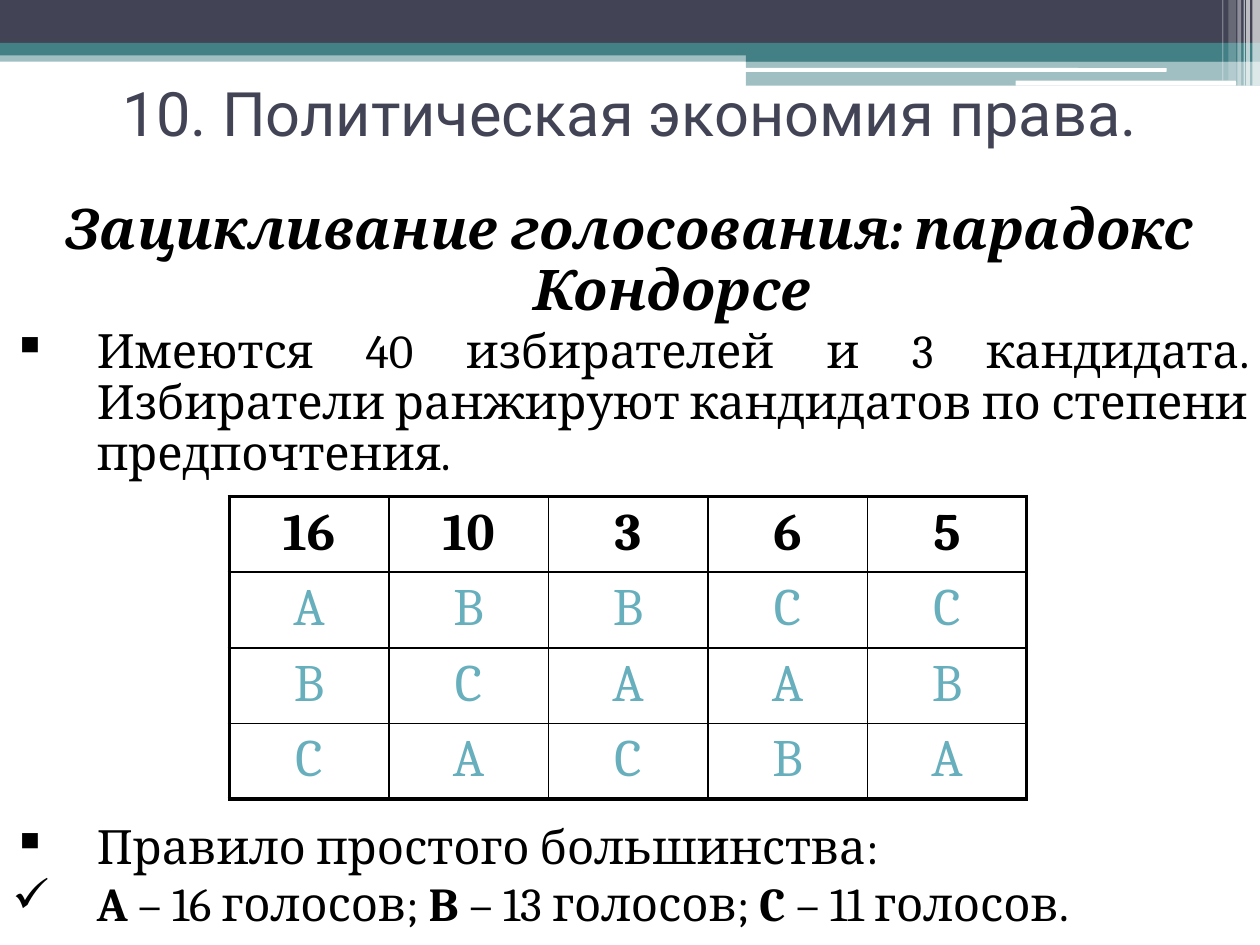
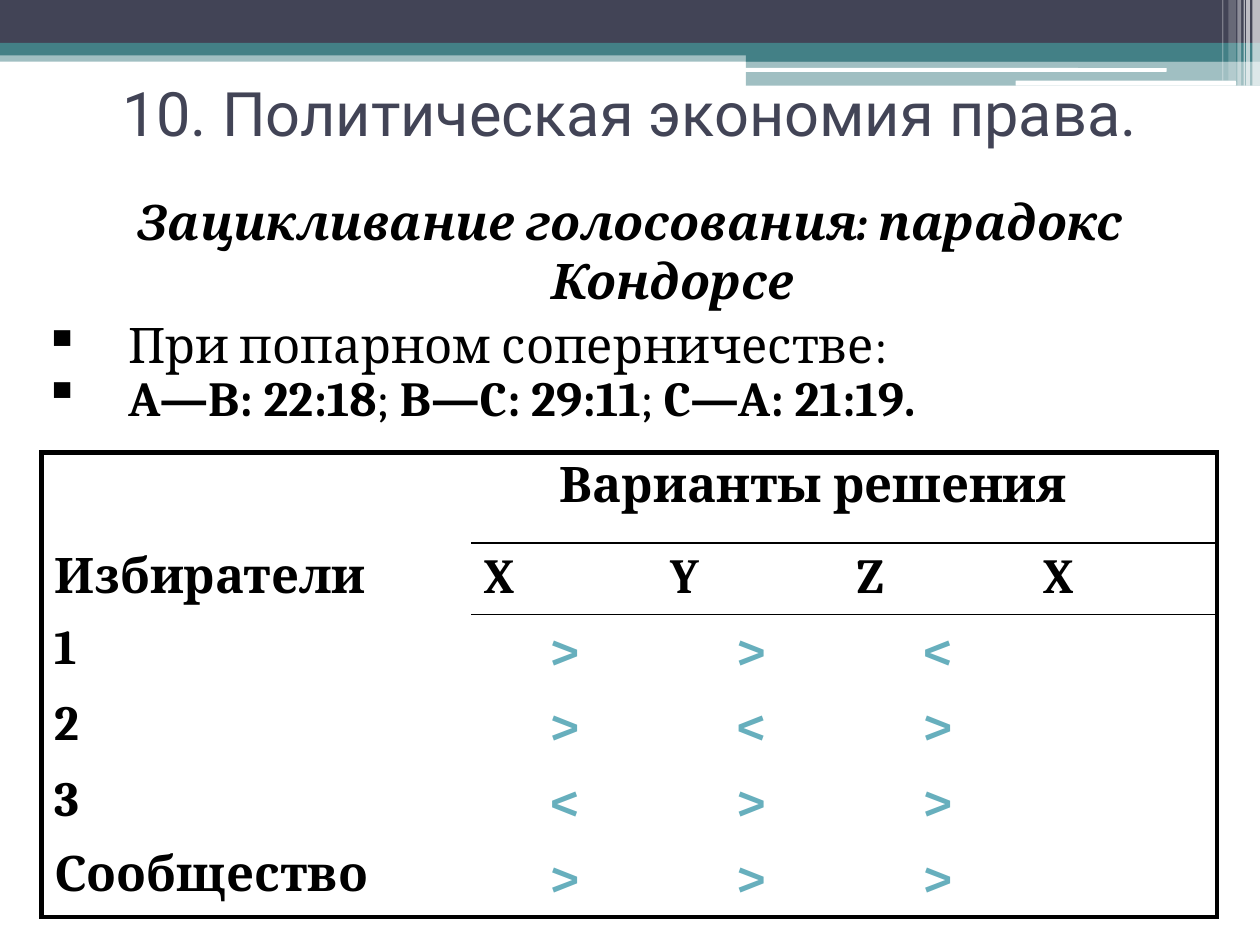
import pptx
import pptx.util
import pptx.dml.color
import pptx.enum.shapes
import pptx.enum.text
import pptx.oxml.ns
import lxml.etree

COLORS = {"navy": "424456", "teal": "438086", "aqua": "67AFBD", "white": "FFFFFF", "black": "000000"}
ALIGN = pptx.enum.text.PP_ALIGN
SHAPE = pptx.enum.shapes.MSO_SHAPE
GRID_STEP = 0.1
PLAIN_TABLE_STYLE = "{2D5ABB26-0587-4C30-8999-92F81FD0307C}"
TITLE = "10. Политическая экономия права."
HEADING = "Зацикливание голосования: парадокс Кондорсе"

BANDS = [
    (0, 4, 100, 0.9, "teal", 50),
    (0, 0, 100, 3.4, "navy", 100),
    (0, 3.4, 100, 1, "teal", 100),
    (59.2, 3.9, 40.8, 1, "teal", 100),
    (59.2, 4.8, 40.8, 2, "teal", 50),
]
PILLS = [(59.1, 5.4, 33.5, 0.3), (80.6, 6.4, 17.5, 0.4)]
STRIPES = [
    (99.4, 0.6, 6.8, 65),
    (98.9, 0.3, 6.8, 65),
    (98.7, 0.1, 6.8, 60),
    (98.2, 0.3, 6.8, 40),
    (97.5, 0.6, 6.4, 20),
    (97, 0.1, 6.4, 30),
]


def grid(steps):
    return pptx.util.Inches(steps * GRID_STEP)


def color(name):
    return pptx.dml.color.RGBColor.from_string(COLORS[name])


def add_xml(parent, tag, **attributes):
    return lxml.etree.SubElement(parent, pptx.oxml.ns.qn(tag), attributes)


class Deck:
    body_font = "Cambria"
    title_font = "Roboto"

    def __init__(self):
        self.presentation = pptx.Presentation()
        self.presentation.slide_width = grid(100)
        self.presentation.slide_height = grid(75)
        self.slide = None

    def new_slide(self):
        self.slide = self.presentation.slides.add_slide(self.presentation.slide_layouts[6])
        for *box, fill, opacity in BANDS:
            self.block(SHAPE.RECTANGLE, box, fill, opacity)
        for box in PILLS:
            self.block(SHAPE.ROUNDED_RECTANGLE, box, "white")
        for left, width, height, opacity in STRIPES:
            self.block(SHAPE.RECTANGLE, (left, 0, width, height), "white", opacity)
        frame = self.text_frame(0, 4.7, 100, 8.4)
        frame.vertical_anchor = pptx.enum.text.MSO_ANCHOR.MIDDLE
        paragraph = frame.paragraphs[0]
        paragraph.text = TITLE
        self.style(paragraph, 35, "navy", ALIGN.CENTER, font=self.title_font)

    def block(self, kind, box, fill, opacity=100):
        shape = self.slide.shapes.add_shape(kind, *map(grid, box))
        shape.shadow.inherit = False
        shape.line.fill.background()
        shape.fill.solid()
        shape.fill.fore_color.rgb = color(fill)
        if opacity < 100:
            solid = shape.fill._xPr.find(pptx.oxml.ns.qn("a:solidFill"))
            add_xml(solid[0], "a:alpha", val=str(opacity * 1000))

    def text_frame(self, *box):
        frame = self.slide.shapes.add_textbox(*map(grid, box)).text_frame
        frame.word_wrap = True
        return frame

    def style(self, paragraph, size, ink, align, bold=None, italic=None, font=None):
        paragraph.alignment = align
        paragraph.font.name = font or self.body_font
        paragraph.font.size = pptx.util.Pt(size)
        paragraph.font.color.rgb = color(ink)
        paragraph.font.bold = bold
        paragraph.font.italic = italic

    def outline(self, paragraph, size, spacing, bullet=None, heading=False):
        properties = paragraph._p.get_or_add_pPr()
        properties.set("marL", str(grid(6.7)))
        properties.set("indent", str(grid(-6.7)))
        if bullet:
            add_xml(add_xml(properties, "a:buClr"), "a:srgbClr", val=COLORS["black"])
            add_xml(properties, "a:buChar", char=bullet)
        paragraph.line_spacing = spacing
        paragraph.space_before = pptx.util.Pt(3)
        align = ALIGN.CENTER if heading else ALIGN.JUSTIFY
        self.style(paragraph, size, "black", align, heading or None, heading or None)

    def heading(self, frame, size, spacing):
        paragraph = frame.paragraphs[0]
        paragraph.text = HEADING
        self.outline(paragraph, size, spacing, heading=True)

    def bullet(self, paragraph, pieces, size, spacing, mark="▪"):
        for text, bold in pieces:
            run = paragraph.add_run()
            run.text = text
            if bold:
                run.font.bold = True
        self.outline(paragraph, size, spacing, mark)

    def table(self, box, column_widths, row_heights):
        table = self.slide.shapes.add_table(
            len(row_heights), len(column_widths), *map(grid, box)).table
        table.first_row = table.horz_banding = False
        table._tbl.tblPr.find(pptx.oxml.ns.qn("a:tableStyleId")).text = PLAIN_TABLE_STYLE
        for column, width in zip(table.columns, column_widths):
            column.width = grid(width)
        for row, height in zip(table.rows, row_heights):
            row.height = grid(height)
        return table

    def cell(self, cell, text, size, ink, align, bold):
        if text:
            paragraph = cell.text_frame.paragraphs[0]
            paragraph.text = text
            self.style(paragraph, size, ink, align, bold)

    def frame_table(self, table, outer, inner=None):
        last_row, last_column = len(table.rows) - 1, len(table.columns) - 1
        for row in range(last_row + 1):
            for column in range(last_column + 1):
                cell = table.cell(row, column)
                end = column + (cell.span_width if cell.is_merge_origin else 1) - 1
                edges = {"a:lnL": column == 0, "a:lnR": end == last_column,
                         "a:lnT": row == 0, "a:lnB": row == last_row}
                widths = {tag: outer if edge else inner for tag, edge in edges.items()}
                self.cell_borders(cell, widths)

    def cell_borders(self, cell, widths):
        properties = cell._tc.get_or_add_tcPr()
        for tag, width in widths.items():
            if width:
                line = add_xml(properties, tag, w=str(pptx.util.Pt(width)))
                add_xml(add_xml(line, "a:solidFill"), "a:srgbClr", val=COLORS["black"])
        cell.fill.solid()
        cell.fill.fore_color.rgb = color("white")


def build_majority_slide(deck):
    deck.new_slide()
    question = deck.text_frame(0, 15.5, 100, 23)
    deck.heading(question, 32, 0.9)
    deck.bullet(question.add_paragraph(), [
        ("Имеются 40 избирателей и 3 кандидата. "
         "Избиратели ранжируют кандидатов по степени предпочтения.", False)], 27, 0.9)

    rankings = ["16 10 3 6 5", "A B B C C", "B C A A B", "C A C B A"]
    table = deck.table((18.2, 39.4, 63.3, 20.4), [12.66] * 5, [5.1] * 4)
    for row, ranking in enumerate(rankings):
        for column, text in enumerate(ranking.split()):
            ink = "aqua" if row else "black"
            deck.cell(table.cell(row, column), text, 30, ink, ALIGN.CENTER, row == 0)
    deck.frame_table(table, 2.25, 1)

    result = deck.text_frame(0, 64.9, 100, 10)
    deck.bullet(result.paragraphs[0], [("Правило простого большинства:", False)], 27, 0.9)
    deck.bullet(result.add_paragraph(), [
        ("A", True), (" – 16 голосов; ", False), ("B ", True), ("– 13 голосов; ", False),
        ("C ", True), ("– 11 голосов.", False)], 27, 0.9, "✓")


def build_pairwise_slide(deck):
    deck.new_slide()
    body = deck.text_frame(2.5, 14.7, 95, 20)
    deck.heading(body, 28, 1)
    deck.bullet(body.add_paragraph(), [("При попарном соперничестве:", False)], 28, 1)
    deck.bullet(body.add_paragraph(), [
        ("A—B: 22:18", True), ("; ", False), ("B—C: 29:11", True), ("; ", False),
        ("C—A: 21:19.", True)], 28, 0.8)

    voters = [("Избиратели", "XYZX"), ("1", ">><"), ("2", "><>"), ("3", "<>>"), ("Сообщество", ">>>")]
    table = deck.table((3.3, 35.9, 93.3, 34.4), [29.2, 4.9] + [14.8] * 4, [7.2, 5.2] + [5.5] * 4)
    table.cell(0, 1).merge(table.cell(0, 5))
    deck.cell(table.cell(0, 1), "Варианты решения", 28, "black", ALIGN.CENTER, True)
    for row, (voter, marks) in enumerate(voters, start=1):
        table.cell(row, 0).merge(table.cell(row, 1))
        deck.cell(table.cell(row, 0), voter, 28, "black", ALIGN.LEFT, True)
        look = (28, "black", ALIGN.LEFT) if row == 1 else (30, "aqua", ALIGN.CENTER)
        for column, mark in enumerate(marks, start=2):
            deck.cell(table.cell(row, column), mark, *look, True)
    for column in range(2, 6):
        deck.cell_borders(table.cell(1, column), {"a:lnR": 3 if column == 5 else None, "a:lnT": 1})
    frame_outer_cells(deck, table)


def frame_outer_cells(deck, table):
    ruled = [table.cell(1, column)._tc for column in range(2, 6)]
    saved = [list(cell.tcPr) for cell in ruled]
    for cell in ruled:
        for child in list(cell.tcPr):
            cell.tcPr.remove(child)
    deck.frame_table(table, 3)
    for cell, children in zip(ruled, saved):
        for child in list(cell.tcPr):
            cell.tcPr.remove(child)
        cell.tcPr.extend(children)


def main():
    deck = Deck()
    build_majority_slide(deck)
    build_pairwise_slide(deck)
    deck.presentation.save("out.pptx")


if __name__ == "__main__":
    main()
